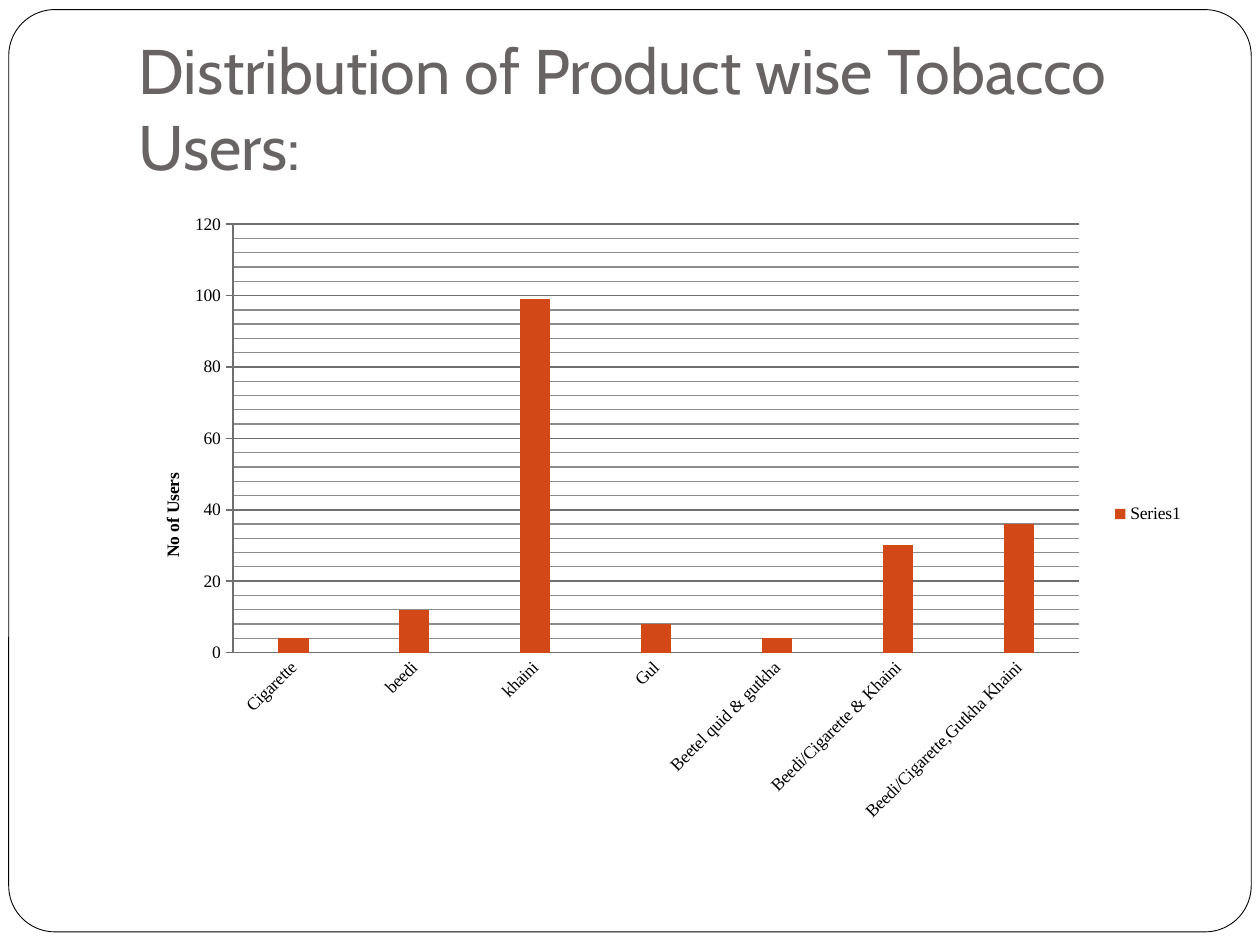
from pptx import Presentation
from pptx.chart.data import CategoryChartData
from pptx.dml.color import RGBColor
from pptx.enum.chart import XL_CHART_TYPE, XL_LEGEND_POSITION, XL_TICK_MARK
from pptx.enum.shapes import MSO_SHAPE
from pptx.enum.text import MSO_ANCHOR, PP_ALIGN
from pptx.oxml import parse_xml
from pptx.oxml.ns import nsdecls, qn
from pptx.util import Pt

COLUMN = XL_CHART_TYPE.COLUMN_CLUSTERED
RIGHT = XL_LEGEND_POSITION.RIGHT
NONE, CROSS = XL_TICK_MARK.NONE, XL_TICK_MARK.CROSS
ROUND = MSO_SHAPE.ROUNDED_RECTANGLE
BOTTOM, LEFT = MSO_ANCHOR.BOTTOM, PP_ALIGN.LEFT


def color(fmt, code):
    """Colour a font, or the fill of a shape, series or line."""
    if hasattr(fmt, "solid"):
        fmt.solid()
        fmt = fmt.fore_color
    else:
        fmt = fmt.color
    fmt.rgb = RGBColor.from_string(code)


def place(node, index, **parts):
    """Give a chart part a fixed place, as shares of the chart."""
    for old in node.findall(qn("c:layout")):
        node.remove(old)
    inner = '<c:layoutTarget val="inner"/>' if "w" in parts else ""
    modes = "".join(f'<c:{k}Mode val="edge"/>' for k in "xy")
    sizes = "".join(f'<c:{k} val="{v}"/>' for k, v in parts.items())
    node.insert(index, parse_xml(
        f'<c:layout {nsdecls("c")}><c:manualLayout>{inner}{modes}{sizes}'
        '</c:manualLayout></c:layout>'))


deck = Presentation()
deck.slide_width, deck.slide_height = Pt(720), Pt(540)
slide = deck.slides.add_slide(deck.slide_layouts[5])
shapes = slide.shapes

# Rounded frame behind everything
frame = shapes.add_shape(ROUND, Pt(5), Pt(5.5), Pt(710), Pt(527))
frame.adjustments[0] = 0.05
frame.shadow.inherit = False
color(frame.fill, "FFFFFF")
color(frame.line.fill, "000000")
frame.line.width = Pt(0.5)
title = shapes.title
title._element.addprevious(frame._element)

# Title
title.left, title.top, title.width, title.height = Pt(72), Pt(21.6), Pt(612), Pt(90)
text = title.text_frame
text.text = "Distribution of Product wise Tobacco Users:"
text.word_wrap = True
text.vertical_anchor = BOTTOM
text.margin_left = text.margin_right = text.margin_bottom = Pt(7.2)
text.margin_top = Pt(3.6)
text.paragraphs[0].alignment = LEFT
font = text.paragraphs[0].runs[0].font
font.name, font.size = "Cabin", Pt(36)
color(font, "696464")

# Column chart
users = {
    "Cigarette": 4,
    "beedi": 12,
    "khaini": 99,
    "Gul": 8,
    "Beetel quid & gutkha": 4,
    "Beedi/Cigarette & Khaini": 30,
    "Beedi/Cigarette,Gutkha Khaini": 36,
}
data = CategoryChartData()
data.categories = users.keys()
data.add_series("Series1", users.values())
chart = shapes.add_chart(COLUMN, Pt(72), Pt(113.76), Pt(612), Pt(360), data).chart
chart.has_title = False
chart.font.name, chart.font.size = "Times New Roman", Pt(10)
color(chart.font, "000000")
plot = chart.plots[0]
plot.gap_width = 300
plot.vary_by_categories = False
color(plot.series[0].format.fill, "D34817")
place(chart._chartSpace.chart.plotArea, 0, x=0.1, y=0.04, w=0.79, h=0.68)

# Legend
chart.has_legend = True
chart.legend.position = RIGHT
chart.legend.include_in_layout = False

# Axes and gridlines
names, scale = chart.category_axis, chart.value_axis
names.major_tick_mark = NONE
names.tick_labels.font.size = Pt(10)
names._element.find(qn("c:txPr")).find(qn("a:bodyPr")).set("rot", "-2700000")
scale.minimum_scale, scale.maximum_scale, scale.major_unit = 0, 120, 20
scale.minor_unit = 4
scale.major_tick_mark = CROSS
scale.has_major_gridlines = scale.has_minor_gridlines = True
for part in (names, scale, scale.major_gridlines):
    color(part.format.line.fill, "6F6F6F")
    part.format.line.width = Pt(1)
minor = scale._element.find(qn("c:minorGridlines"))
minor.append(parse_xml(
    f'<c:spPr {nsdecls("c", "a")}><a:ln w="{Pt(0.75)}"><a:solidFill>'
    '<a:srgbClr val="8C8C8C"/></a:solidFill></a:ln></c:spPr>'))

# Value axis title, turned upright
label = scale.axis_title
label.text_frame.text = "No of Users"
font = label.text_frame.paragraphs[0].runs[0].font
font.name, font.size, font.bold = "Times New Roman", Pt(10), True
color(font, "000000")
turn = label.text_frame._txBody.find(qn("a:bodyPr"))
turn.set("rot", "-5400000")
turn.set("vert", "horz")
place(label._element, 1, x=0.03, y=0.43)

deck.save("out.pptx")
